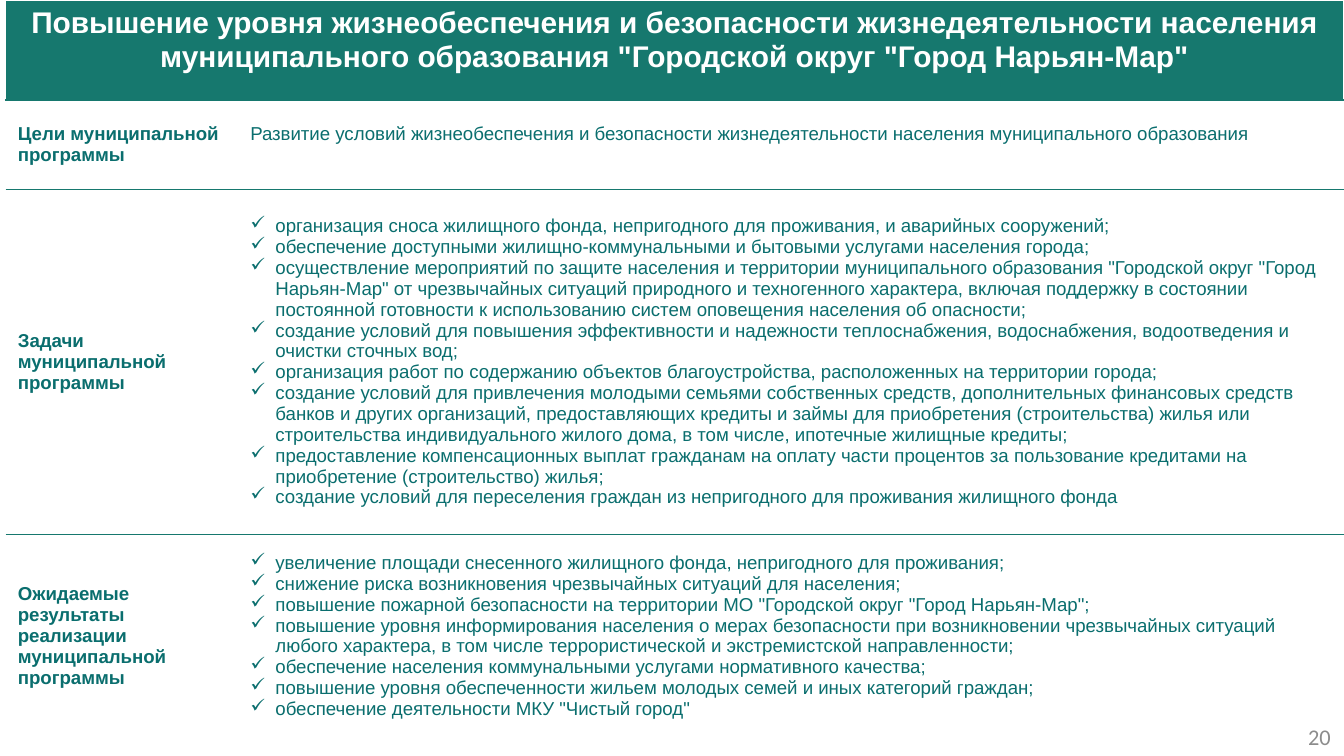
from lxml import etree
from pptx import Presentation
from pptx.dml.color import RGBColor
from pptx.enum.text import MSO_ANCHOR, PP_ALIGN
from pptx.oxml.ns import qn
from pptx.util import Pt

TITLE = 'Повышение уровня жизнеобеспечения и безопасности жизнедеятельности населения муниципального образования "Городской округ "Город Нарьян-Мар"'
GOAL = "Развитие условий жизнеобеспечения и безопасности жизнедеятельности населения муниципального образования"
TASKS = [
    "организация сноса жилищного фонда, непригодного для проживания, и аварийных сооружений;",
    "обеспечение доступными жилищно-коммунальными и бытовыми услугами населения города;",
    'осуществление мероприятий по защите населения и территории муниципального образования "Городской округ "Город Нарьян-Мар" от чрезвычайных ситуаций природного и техногенного характера, включая поддержку в состоянии постоянной готовности к использованию систем оповещения населения об опасности;',
    "создание условий для повышения эффективности и надежности теплоснабжения, водоснабжения, водоотведения и очистки сточных вод;",
    "организация работ по содержанию объектов благоустройства, расположенных на территории города;",
    "создание условий для привлечения молодыми семьями собственных средств, дополнительных финансовых средств банков и других организаций, предоставляющих кредиты и займы для приобретения (строительства) жилья или строительства индивидуального жилого дома, в том числе, ипотечные жилищные кредиты;",
    "предоставление компенсационных выплат гражданам на оплату части процентов за пользование кредитами на приобретение (строительство) жилья;",
    "создание условий для переселения граждан из непригодного для проживания жилищного фонда",
]
RESULTS = [
    "увеличение площади снесенного жилищного фонда, непригодного для проживания;",
    "снижение риска возникновения чрезвычайных ситуаций для населения;",
    'повышение пожарной безопасности на территории МО "Городской округ "Город Нарьян-Мар";',
    "повышение уровня информирования населения о мерах безопасности при возникновении чрезвычайных ситуаций любого характера, в том числе террористической и экстремистской направленности;",
    "обеспечение населения коммунальными услугами нормативного качества;",
    "повышение уровня обеспеченности жильем молодых семей и иных категорий граждан;",
    'обеспечение деятельности МКУ "Чистый город"',
]
SECTIONS = [
    ("Цели муниципальной программы", [GOAL]),
    ("Задачи муниципальной программы", TASKS),
    ("Ожидаемые результаты реализации муниципальной программы", RESULTS),
]
PAGE_NUMBER = "20"

GREEN = RGBColor(0x16, 0x78, 0x6E)
TEAL = RGBColor(0x0A, 0x6E, 0x6E)
WHITE = RGBColor(0xFF, 0xFF, 0xFF)
GRAY = RGBColor(0x8C, 0x8C, 0x8C)
MIDDLE, TOP = MSO_ANCHOR.MIDDLE, MSO_ANCHOR.TOP
CENTER, LEFT, RIGHT = PP_ALIGN.CENTER, PP_ALIGN.LEFT, PP_ALIGN.RIGHT

COLUMN_WIDTHS = [124.5, 592.5]
ROW_HEIGHTS = [53.5, 47.75, 185, 108.75]
TABLE_LEFT, TABLE_TOP = 3, 0.2
BULLET_INDENT = 13.5
GOAL_BOTTOM_MARGIN = 14.6

TITLE_FONT = {"name": "Arial", "size": Pt(16), "bold": True}
LABEL_FONT = {"name": "Arial", "size": Pt(10), "bold": True}
BODY_FONT = {"name": "Arial", "size": Pt(10), "bold": False}
NUMBER_FONT = {"name": "Calibri", "size": Pt(12), "bold": False}


def add_bullet(paragraph):
    properties = paragraph._p.get_or_add_pPr()
    properties.set("marL", str(Pt(BULLET_INDENT)))
    properties.set("indent", str(-Pt(BULLET_INDENT)))
    etree.SubElement(properties, qn("a:buFont")).set("typeface", "Wingdings")
    etree.SubElement(properties, qn("a:buChar")).set("char", "ü")


def write(frame, lines, font, color, align=LEFT, bulleted=False):
    for index, line in enumerate(lines):
        paragraph = frame.add_paragraph() if index else frame.paragraphs[0]
        paragraph.alignment = align
        if bulleted:
            add_bullet(paragraph)
        run = paragraph.add_run()
        run.text = line
        for attribute, value in font.items():
            setattr(run.font, attribute, value)
        run.font.color.rgb = color


def set_borders(cell, colors):
    properties = cell._tc.get_or_add_tcPr()
    for side in "LRTB":
        line = etree.SubElement(properties, qn(f"a:ln{side}"), w=str(Pt(1)))
        if side in colors:
            fill = etree.SubElement(line, qn("a:solidFill"))
            etree.SubElement(fill, qn("a:srgbClr"), val=str(colors[side]))
        else:
            etree.SubElement(line, qn("a:noFill"))


def format_cell(cell, anchor, borders, fill=None):
    cell.vertical_anchor = anchor
    cell.margin_left = cell.margin_right = Pt(6.6)
    set_borders(cell, borders)
    if fill is None:
        cell.fill.background()
    else:
        cell.fill.solid()
        cell.fill.fore_color.rgb = fill


def build_table(slide):
    table = slide.shapes.add_table(
        len(ROW_HEIGHTS), len(COLUMN_WIDTHS), Pt(TABLE_LEFT), Pt(TABLE_TOP),
        Pt(sum(COLUMN_WIDTHS)), Pt(sum(ROW_HEIGHTS))).table
    table.first_row = table.horz_banding = False
    for column, width in zip(table.columns, COLUMN_WIDTHS):
        column.width = Pt(width)
    for row, height in zip(table.rows, ROW_HEIGHTS):
        row.height = Pt(height)

    title = table.cell(0, 0)
    title.merge(table.cell(0, 1))
    for column in range(2):
        format_cell(table.cell(0, column), TOP,
                    {"L": WHITE, "T": WHITE, "R": WHITE, "B": GREEN}, GREEN)
    write(title.text_frame, [TITLE], TITLE_FONT, WHITE, CENTER)

    for row, (label, lines) in enumerate(SECTIONS, 1):
        borders = {"T": GREEN}
        if row < len(SECTIONS):
            borders["B"] = GREEN
        for column in range(2):
            format_cell(table.cell(row, column), MIDDLE, borders)
        write(table.cell(row, 0).text_frame, [label], LABEL_FONT, TEAL)
        write(table.cell(row, 1).text_frame, lines, BODY_FONT, TEAL,
              bulleted=len(lines) > 1)
    table.cell(1, 1).margin_bottom = Pt(GOAL_BOTTOM_MARGIN)


def main():
    deck = Presentation()
    deck.slide_width, deck.slide_height = Pt(720), Pt(405)
    slide = deck.slides.add_slide(deck.slide_layouts[6])
    number = slide.shapes.add_textbox(Pt(552), Pt(384), Pt(168), Pt(21.5)).text_frame
    number.word_wrap = True
    number.vertical_anchor = MIDDLE
    write(number, [PAGE_NUMBER], NUMBER_FONT, GRAY, RIGHT)
    build_table(slide)
    deck.save("out.pptx")


if __name__ == "__main__":
    main()
